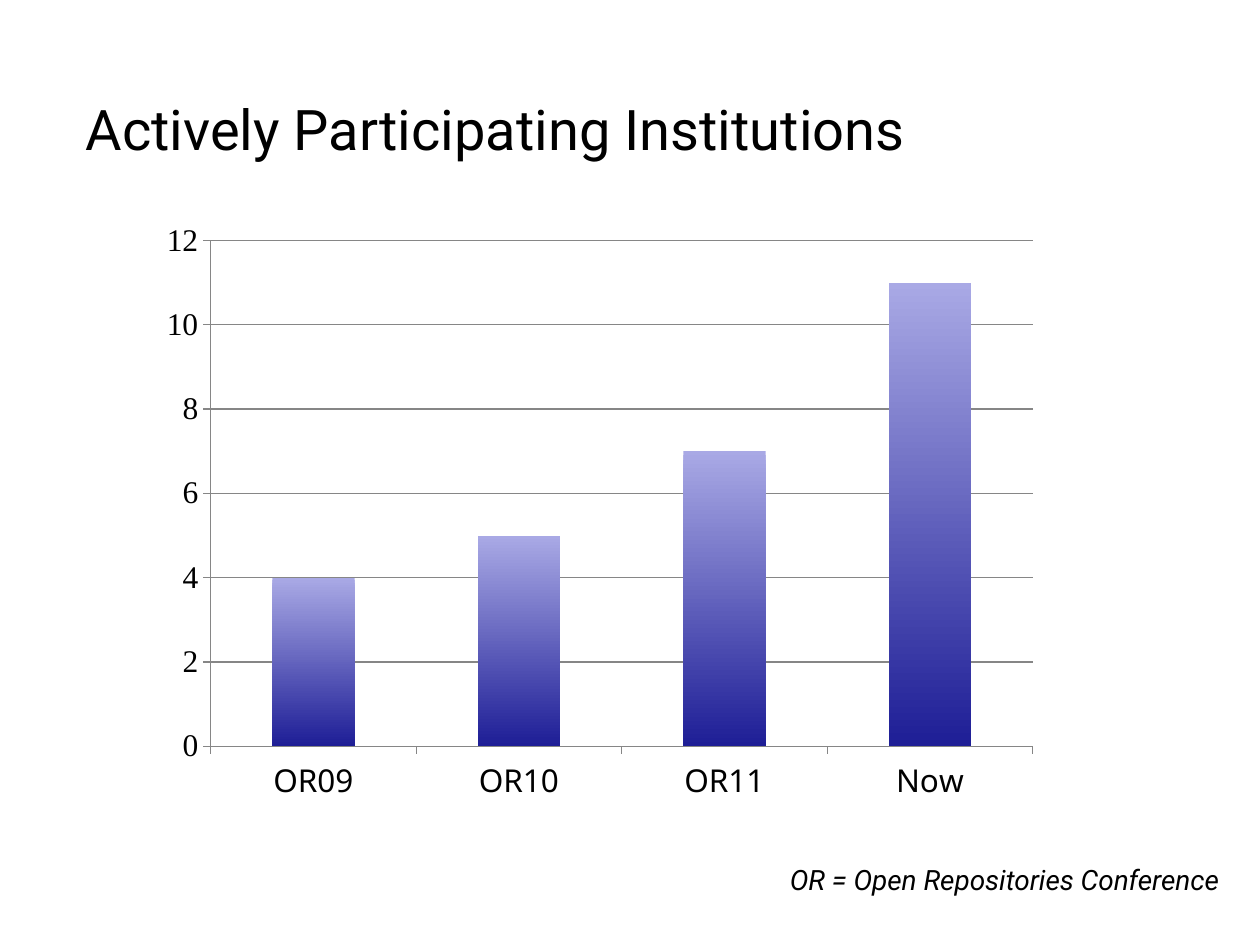
from lxml import etree
from pptx import Presentation
from pptx.chart.data import CategoryChartData
from pptx.dml.color import RGBColor
from pptx.enum.chart import XL_CHART_TYPE, XL_TICK_MARK
from pptx.enum.text import MSO_ANCHOR, PP_ALIGN
from pptx.oxml.ns import qn
from pptx.util import Inches, Pt

BLACK, GREY = "000000", "868686"
LIGHT, DARK = "A9A9E5", "1E1E96"


def rgb(code):
    return RGBColor.from_string(code)


def set_font(font, size, name, color=BLACK, italic=False):
    font.size, font.name, font.italic = Pt(size), name, italic
    font.color.rgb = rgb(color)


def place(shape, box):
    shape.left, shape.top, shape.width, shape.height = map(Inches, box)


def write(shape, text, size=16, name="Roboto", spacing=1.0, **style):
    frame = shape.text_frame
    frame.word_wrap = True
    frame.vertical_anchor = MSO_ANCHOR.MIDDLE
    para = frame.paragraphs[0]
    para.alignment = PP_ALIGN.LEFT
    para.line_spacing = spacing
    para.space_before = Pt(0)
    run = para.add_run()
    run.text = text
    set_font(run.font, size, name, **style)


def add_title(slide, box):
    title = slide.shapes.title
    place(title, box)
    write(title, "Actively Participating Institutions", size=32)


def add_note(slide, box):
    note = slide.shapes.add_textbox(*map(Inches, box))
    write(note, "OR = Open Repositories Conference", spacing=0.85, italic=True)


def fix_plot(chart, x, y, w, h):
    """Pin the inner plot area, in fractions of the chart."""
    area = chart._chartSpace.chart.plotArea
    for old in area.findall(qn("c:layout")):
        area.remove(old)
    layout = etree.Element(qn("c:layout"))
    manual = etree.SubElement(layout, qn("c:manualLayout"))
    parts = dict(layoutTarget="inner", xMode="edge", yMode="edge", x=x, y=y, w=w, h=h)
    for tag, value in parts.items():
        etree.SubElement(manual, qn(f"c:{tag}")).set("val", str(value))
    area.insert(0, layout)


def style_axis(axis, name):
    axis.major_tick_mark = XL_TICK_MARK.OUTSIDE
    axis.minor_tick_mark = XL_TICK_MARK.NONE
    axis.format.line.color.rgb = rgb(GREY)
    axis.format.line.width = Pt(0.75)
    set_font(axis.tick_labels.font, 18, name)


def add_bars(slide, box):
    data = CategoryChartData()
    data.categories = ["OR09", "OR10", "OR11", "Now"]
    data.add_series("Series 1", [4, 5, 7, 11])
    chart = slide.shapes.add_chart(
        XL_CHART_TYPE.COLUMN_STACKED, *map(Inches, box), data).chart
    chart.has_legend = chart.has_title = False
    set_font(chart.font, 18, "Times New Roman")
    fix_plot(chart, x=0.07, y=0.05, w=0.91, h=0.84)

    style_axis(chart.category_axis, "Noto Sans")
    scale = chart.value_axis
    style_axis(scale, "Times New Roman")
    scale.minimum_scale, scale.maximum_scale, scale.major_unit = 0, 12, 2
    scale.has_major_gridlines = True
    grid = scale.major_gridlines.format.line
    grid.color.rgb, grid.width = rgb(GREY), Pt(0.75)

    plot = chart.plots[0]
    plot.gap_width, plot.overlap = 150, 100
    plot.vary_by_categories = False
    fill = plot.series[0].format.fill
    fill.gradient()
    fill.gradient_angle = 270
    for stop, color in zip(fill.gradient_stops, (LIGHT, DARK)):
        stop.color.rgb = rgb(color)


def main():
    deck = Presentation()
    deck.slide_width, deck.slide_height = Inches(10), Inches(7.5)
    slide = deck.slides.add_slide(deck.slide_layouts[5])
    add_title(slide, (0.58, 0.7, 8.58, 0.64))
    add_bars(slide, (1.17, 1.67, 7.17, 4.78))
    add_note(slide, (6.17, 6.83, 3.67, 0.34))
    deck.save("out.pptx")


if __name__ == "__main__":
    main()
